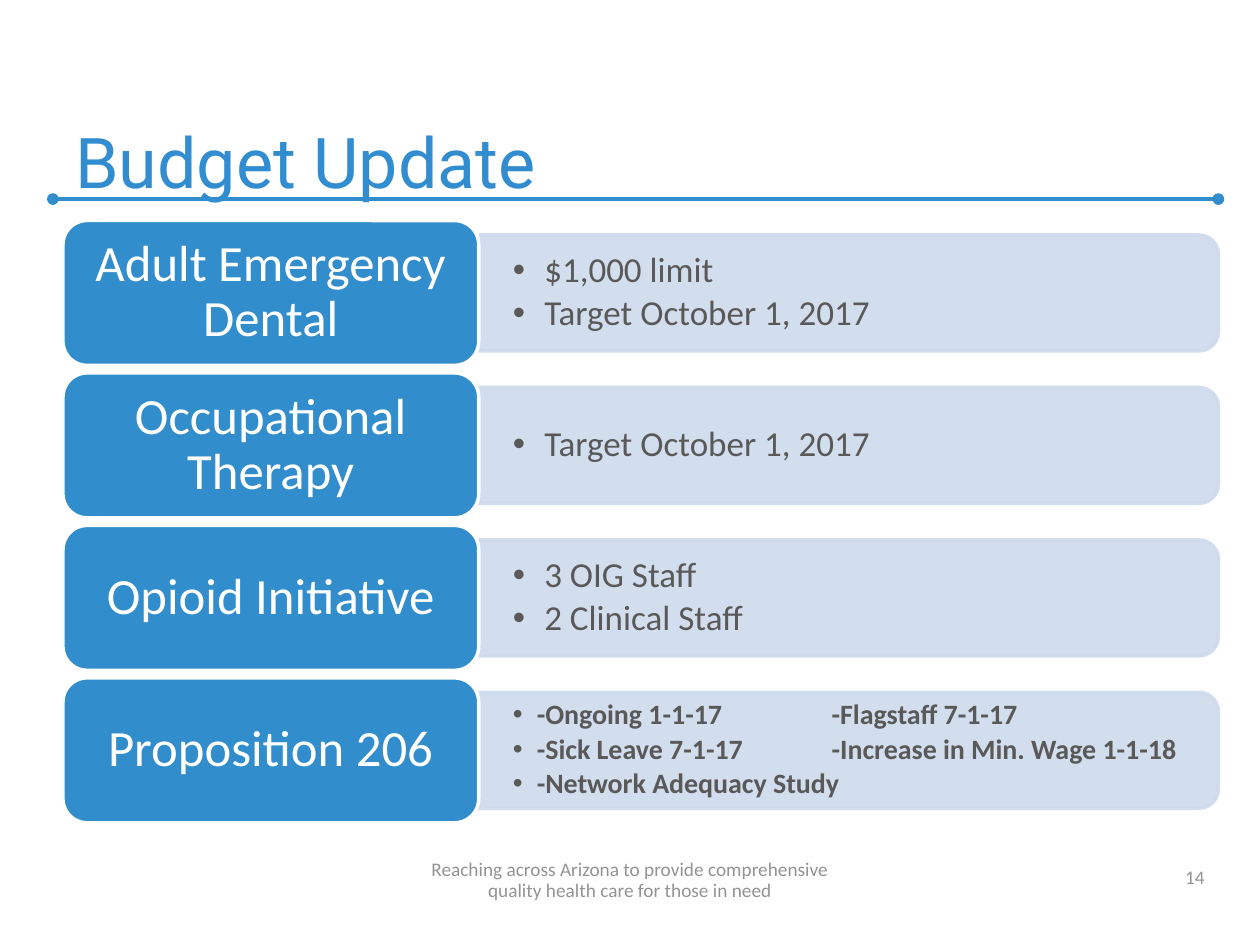
"""Build the Budget Update slide with four labelled rows of bullet points."""
from lxml import etree
from pptx import Presentation
from pptx.dml.color import RGBColor
from pptx.enum import shapes, text
from pptx.oxml import ns
from pptx.util import Inches, Pt

BLUE, PALE, GREY, WHITE, MUTED = "318DCC", "CEDBEC", "595959", "FFFFFF", "939393"
TITLE = "Budget Update"
FOOTER = "Reaching across Arizona to provide comprehensive\vquality health care for those in need"
PAGE = "14"
ROWS = [
    ("Adult Emergency Dental", ["$1,000 limit", "Target October 1, 2017"]),
    ("Occupational Therapy", ["Target October 1, 2017"]),
    ("Opioid Initiative", ["3 OIG Staff", "2 Clinical Staff"]),
    ("Proposition 206", ["-Ongoing 1-1-17\t-Flagstaff 7-1-17",
                         "-Sick Leave 7-1-17\t-Increase in Min. Wage 1-1-18",
                         "-Network Adequacy Study"]),
]
LEFT, TOP, PITCH = 0.5, 1.75, 1.21
LABEL_W, LABEL_H = 3.3, 1.15
PANEL_W, PANEL_H = 5.87, 0.92
TEXT_W, TEXT_H = 5.82, 0.83
SECOND_COLUMN = 2.53


def rgb(value):
    return RGBColor.from_string(value)


def add_xml(parent, tag, **attrs):
    return etree.SubElement(parent, ns.qn(tag), attrs)


def add_block(s, kind, box, fill, line):
    sp = s.shapes.add_shape(kind, *map(Inches, box))
    sp.shadow.inherit = False
    sp.fill.solid()
    sp.fill.fore_color.rgb = rgb(fill)
    sp.line.color.rgb = rgb(line)
    sp.line.width = Pt(2)
    return sp


def set_alpha(sp, percent):
    for color in sp._element.spPr.iter(ns.qn("a:srgbClr")):
        add_xml(color, "a:alpha", val=str(percent * 1000))


def set_frame(sp, anchor, inset_x=0.1, inset_y=0.05):
    tf = sp.text_frame
    tf.word_wrap = True
    tf.vertical_anchor = anchor
    tf.margin_left = tf.margin_right = Inches(inset_x)
    tf.margin_top = tf.margin_bottom = Inches(inset_y)
    return tf


def style(p, size, color, align=text.PP_ALIGN.LEFT, name="Calibri", bold=False, spacing=None):
    p.alignment = align
    p.line_spacing = spacing
    f = p.font
    f.name, f.size, f.bold = name, Pt(size), bold
    f.color.rgb = rgb(color)


def add_text(s, box, content, size, color, **kwargs):
    tf = set_frame(s.shapes.add_textbox(*map(Inches, box)), text.MSO_ANCHOR.BOTTOM)
    p = tf.paragraphs[0]
    p.text = content
    style(p, size, color, **kwargs)


def add_bullets(s, box, items):
    tf = set_frame(s.shapes.add_textbox(*map(Inches, box)), text.MSO_ANCHOR.MIDDLE, 0.27, 0.14)
    dense = len(items) > 2
    size, indent = (16, 0.19) if dense else (20, 0.25)
    for i, item in enumerate(items):
        p = tf.add_paragraph() if i else tf.paragraphs[0]
        p.text = item
        pPr = p._p.get_or_add_pPr()
        pPr.set("marL", str(Inches(indent)))
        pPr.set("indent", str(-Inches(indent)))
        add_xml(pPr, "a:buFont", typeface="Arial")
        add_xml(pPr, "a:buChar", char="•")
        if "\t" in item:
            add_xml(add_xml(pPr, "a:tabLst"), "a:tab", pos=str(Inches(SECOND_COLUMN)), algn="l")
        style(p, size, GREY, bold=dense, spacing=0.9)
        p.space_after = Pt(size * 0.15)


def add_row(s, top, label, items):
    middle = top + LABEL_H / 2
    right = LEFT + LABEL_W
    panel_box = (right + (PANEL_W - PANEL_H) / 2, middle - PANEL_W / 2, PANEL_H, PANEL_W)
    panel = add_block(s, shapes.MSO_SHAPE.ROUND_2_SAME_RECTANGLE, panel_box, PALE, PALE)
    panel.rotation = 90
    set_alpha(panel, 90)
    add_bullets(s, (right, middle - TEXT_H / 2, TEXT_W, TEXT_H), items)
    sp = add_block(s, shapes.MSO_SHAPE.ROUNDED_RECTANGLE, (LEFT, top, LABEL_W, LABEL_H), BLUE, WHITE)
    p = set_frame(sp, text.MSO_ANCHOR.MIDDLE, 0.12, 0.06).paragraphs[0]
    p.text = label
    style(p, 29, WHITE, text.PP_ALIGN.CENTER, spacing=0.9)


def add_rule(s):
    ends = map(Inches, (0.42, 1.58, 9.67, 1.58))
    rule = s.shapes.add_connector(shapes.MSO_CONNECTOR.STRAIGHT, *ends)
    rule.line.color.rgb = rgb(BLUE)
    rule.line.width = Pt(2.25)
    for end in ("a:headEnd", "a:tailEnd"):
        add_xml(rule.line._get_or_add_ln(), end, type="oval")
    add_xml(rule._element.spPr, "a:effectLst")


def main():
    prs = Presentation()
    prs.slide_width, prs.slide_height = Inches(10), Inches(7.5)
    s = prs.slides.add_slide(prs.slide_layouts[6])
    add_rule(s)
    add_text(s, (0.5, 0.33, 9.08, 1.33), TITLE, 40, "318DCF", name="Roboto")
    for i, (label, items) in enumerate(ROWS):
        add_row(s, TOP + i * PITCH, label, items)
    add_text(s, (7.33, 6.78, 2.33, 0.32), PAGE, 11, MUTED, align=text.PP_ALIGN.RIGHT)
    add_text(s, (0, 6.78, 10, 0.42), FOOTER, 11, MUTED, align=text.PP_ALIGN.CENTER, spacing=Pt(12))
    prs.save("out.pptx")


if __name__ == "__main__":
    main()
